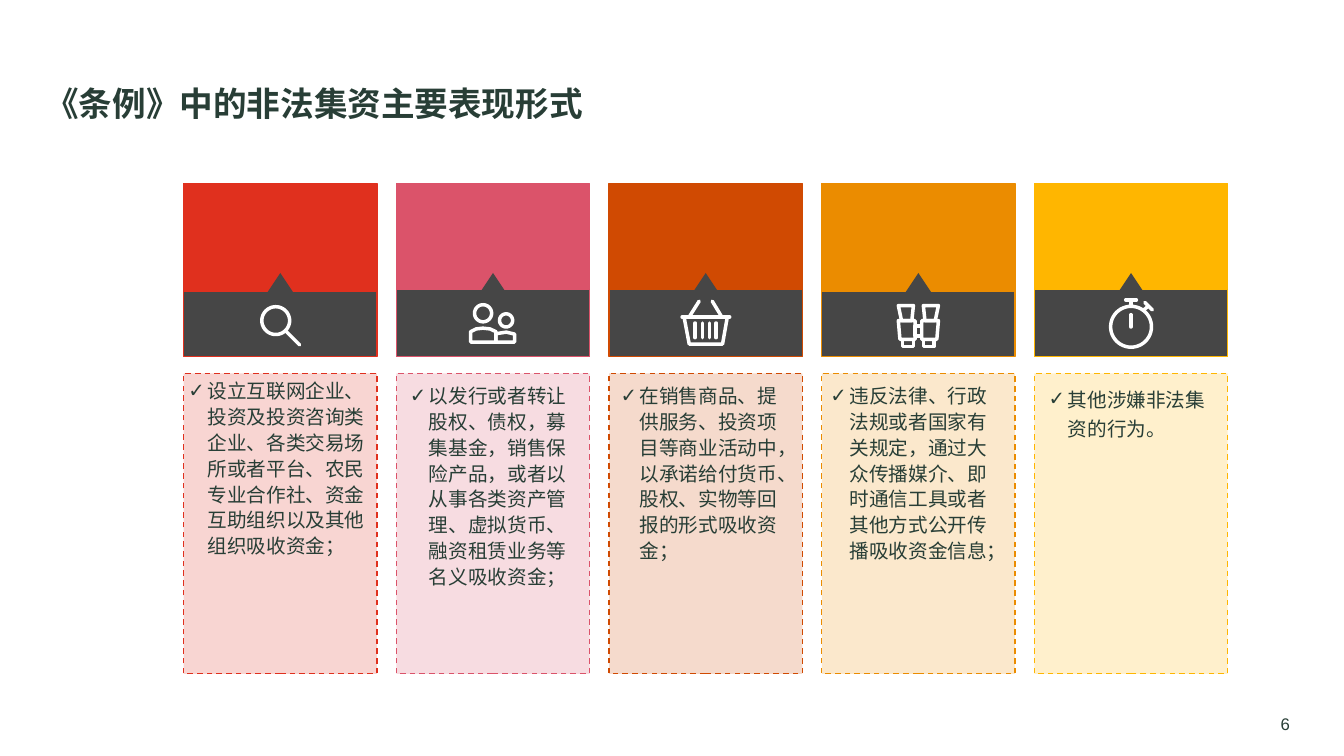
from dataclasses import dataclass
from math import cos, sin, tau

from lxml.etree import SubElement
from pptx import Presentation
from pptx.dml.color import RGBColor
from pptx.enum.dml import MSO_LINE
from pptx.enum.shapes import MSO_SHAPE
from pptx.enum.text import MSO_ANCHOR, MSO_AUTO_SIZE, PP_ALIGN
from pptx.oxml.ns import qn
from pptx.util import Cm, Pt

# Colours
INK = RGBColor(0x28, 0x3E, 0x36)
GRAPHITE = RGBColor(0x46, 0x46, 0x46)
WHITE = RGBColor(0xFF, 0xFF, 0xFF)
RED = RGBColor(0xE0, 0x30, 0x1E)
ROSE = RGBColor(0xDB, 0x53, 0x6A)
RUST = RGBColor(0xD0, 0x4A, 0x02)
ORANGE = RGBColor(0xEB, 0x8C, 0x00)
YELLOW = RGBColor(0xFF, 0xB6, 0x00)

# Column grid, in centimetres
FIRST_LEFT, PITCH, WIDTH = 4.63, 5.36, 4.87
HEADER_TOP, HEADER_HEIGHT = 4.62, 2.72
BAND_TOP, BAND_HEIGHT = 7.29, 1.7
PANEL_TOP, PANEL_HEIGHT = 9.41, 7.57
TEXT_TOP = 9.49
POINTER_TOP, POINTER_WIDTH, POINTER_HEIGHT = 6.88, 0.64, 0.48
RING_POINTS = 48

Point = tuple[float, float]


@dataclass(frozen=True)
class Stroke:
    points: list[Point]
    closed: bool = False


@dataclass(frozen=True)
class Column:
    color: RGBColor
    text: str
    text_offset: float
    text_width: float
    text_height: float
    icon: list[Stroke]
    inset: bool = True
    spacing: float = 1.1
    header_in_front: bool = False


def ring(left: float, top: float, diameter: float) -> Stroke:
    radius = diameter / 2
    angles = [tau * step / RING_POINTS for step in range(RING_POINTS)]
    return Stroke([(left + radius * (1 + cos(angle)), top + radius * (1 + sin(angle)))
                   for angle in angles], True)


def box(left: float, top: float, right: float, bottom: float) -> Stroke:
    return Stroke([(left, top), (right, top), (right, bottom), (left, bottom)], True)


def mirrored(stroke: Stroke) -> Stroke:
    return Stroke([(WIDTH - x, y) for x, y in stroke.points], stroke.closed)


# Icons, measured from the top left corner of the dark band
MAGNIFIER = [ring(1.97, 0.44, 0.7), Stroke([(2.59, 1.07), (2.92, 1.4)])]
PEOPLE = [
    ring(1.97, 0.39, 0.43),
    ring(2.6, 0.62, 0.33),
    Stroke([(1.87, 1.33), (1.87, 1.07), (2.01, 1), (2.18, 0.98), (2.36, 1),
            (2.51, 1.07), (2.51, 1.33)], True),
    Stroke([(2.51, 1.33), (2.51, 1.12), (2.77, 1.08), (2.98, 1.13), (2.98, 1.33)], True),
]
BASKET = [
    Stroke([(1.84, 0.7), (3.04, 0.7)]),
    Stroke([(1.89, 0.7), (2.02, 1.38), (2.86, 1.38), (2.98, 0.7)]),
    Stroke([(2.03, 0.68), (2.27, 0.3)]),
    Stroke([(2.83, 0.68), (2.6, 0.3)]),
    *[Stroke([(x, 0.85), (x, 1.22)]) for x in (2.17, 2.35, 2.53, 2.7)],
]
BARREL = [
    Stroke([(1.93, 0.41), (2.31, 0.41), (2.27, 0.79), (2.01, 0.79)], True),
    Stroke([(1.93, 0.79), (2.35, 0.79), (2.35, 1.26), (1.97, 1.26)], True),
    box(2.04, 1.26, 2.31, 1.44),
]
BINOCULARS = [*BARREL, *map(mirrored, BARREL), box(2.35, 0.93, 2.52, 1.18)]
STOPWATCH = [
    ring(1.92, 0.43, 1.03),
    Stroke([(2.43, 0.64), (2.43, 0.95)]),
    Stroke([(2.43, 0.27), (2.43, 0.41)]),
    Stroke([(2.3, 0.27), (2.57, 0.27)]),
    Stroke([(2.78, 0.33), (2.97, 0.52)]),
    Stroke([(2.86, 0.43), (2.77, 0.51)]),
]

COLUMNS = [
    Column(RED, "设立互联网企业、投资及投资咨询类企业、各类交易场所或者平台、农民专业合作社、"
           "资金互助组织以及其他组织吸收资金；", 0.12, 4.67, 4.57, MAGNIFIER,
           inset=False, header_in_front=True),
    Column(ROSE, "以发行或者转让股权、债权，募集基金，销售保险产品，或者以从事各类资产管理、"
           "虚拟货币、融资租赁业务等名义吸收资金；", 0.09, 4.67, 5.49, PEOPLE),
    Column(RUST, "在销售商品、提供服务、投资项目等商业活动中，以承诺给付货币、股权、"
           "实物等回报的形式吸收资金；", 0.04, 4.8, 4.83, BASKET),
    Column(ORANGE, "违反法律、行政法规或者国家有关规定，通过大众传播媒介、即时通信工具或者"
           "其他方式公开传播吸收资金信息；", -0.03, 4.83, 4.83, BINOCULARS,
           header_in_front=True),
    Column(YELLOW, "其他涉嫌非法集资的行为。", 0.11, 4.67, 1.68, STOPWATCH, spacing=1.25),
]


def add_run(paragraph, text: str, size: float, bold: bool = False) -> None:
    run = paragraph.add_run()
    run.text = text
    run.font.name = "Arial"
    run.font.size = Pt(size)
    run.font.bold = bold
    run.font.color.rgb = INK


def clear_insets(frame) -> None:
    frame.margin_left = frame.margin_right = frame.margin_top = frame.margin_bottom = 0


def add_block(slide, kind, left: float, top: float, width: float, height: float,
              fill: RGBColor, outline: RGBColor | None = None):
    shape = slide.shapes.add_shape(kind, Cm(left), Cm(top), Cm(width), Cm(height))
    shape.shadow.inherit = False
    shape.fill.solid()
    shape.fill.fore_color.rgb = fill
    if outline is None:
        shape.line.fill.background()
    else:
        shape.line.color.rgb = outline
        shape.line.width = Pt(1)
    return shape


def add_icon(slide, icon: list[Stroke], left: float, top: float) -> None:
    builder = None
    for stroke in icon:
        start, *others = [(Cm(left + x), Cm(top + y)) for x, y in stroke.points]
        if builder is None:
            builder = slide.shapes.build_freeform(*start)
        else:
            builder.move_to(*start)
        builder.add_line_segments(others, close=stroke.closed)
    shape = builder.convert_to_shape()
    shape.shadow.inherit = False
    shape.fill.background()
    shape.line.color.rgb = WHITE
    shape.line.width = Pt(2.5)
    shape.line._get_or_add_ln().set("cap", "rnd")


def add_bullet_text(slide, column: Column, left: float) -> None:
    text_box = slide.shapes.add_textbox(Cm(left + column.text_offset), Cm(TEXT_TOP),
                                        Cm(column.text_width), Cm(column.text_height))
    frame = text_box.text_frame
    frame.word_wrap = True
    frame.auto_size = MSO_AUTO_SIZE.SHAPE_TO_FIT_TEXT
    if not column.inset:
        clear_insets(frame)
    paragraph = frame.paragraphs[0]
    paragraph.line_spacing = column.spacing
    properties = paragraph._p.get_or_add_pPr()
    properties.set("marL", str(Cm(0.48)))
    properties.set("indent", str(Cm(-0.48)))
    SubElement(properties, qn("a:buFont"), typeface="Arial")
    SubElement(properties, qn("a:buChar"), char="✓")
    add_run(paragraph, column.text, 14)


def add_column(slide, column: Column, left: float) -> None:
    # Header and dark band
    header = (HEADER_TOP, HEADER_HEIGHT, column.color)
    band = (BAND_TOP, BAND_HEIGHT, GRAPHITE)
    for top, height, fill in (band, header) if column.header_in_front else (header, band):
        add_block(slide, MSO_SHAPE.RECTANGLE, left, top, WIDTH, height, fill, column.color)
    add_block(slide, MSO_SHAPE.ISOSCELES_TRIANGLE, left + (WIDTH - POINTER_WIDTH) / 2,
              POINTER_TOP, POINTER_WIDTH, POINTER_HEIGHT, GRAPHITE)
    add_icon(slide, column.icon, left, BAND_TOP)
    # Tinted panel with its text
    panel = add_block(slide, MSO_SHAPE.RECTANGLE, left, PANEL_TOP, WIDTH, PANEL_HEIGHT,
                      column.color, column.color)
    panel.line.dash_style = MSO_LINE.DASH
    tint = panel.fill._xPr.find(qn("a:solidFill"))[0]
    SubElement(tint, qn("a:alpha"), val="20000")
    add_bullet_text(slide, column, left)


def main() -> None:
    presentation = Presentation()
    presentation.slide_width, presentation.slide_height = Cm(33.87), Cm(19.05)
    slide = presentation.slides.add_slide(presentation.slide_layouts[5])

    # Title
    title = slide.shapes.title
    title.left, title.top, title.width, title.height = Cm(1.14), Cm(2.08), Cm(31.57), Cm(1.02)
    clear_insets(title.text_frame)
    title.text_frame.vertical_anchor = MSO_ANCHOR.BOTTOM
    title.text_frame.paragraphs[0].alignment = PP_ALIGN.LEFT
    add_run(title.text_frame.paragraphs[0], "《条例》中的非法集资主要表现形式", 24, bold=True)

    # Columns
    for index, column in enumerate(COLUMNS):
        add_column(slide, column, FIRST_LEFT + index * PITCH)

    # Page number
    number = slide.shapes.add_textbox(Cm(31.72), Cm(17.98), Cm(0.79), Cm(0.51)).text_frame
    clear_insets(number)
    number.word_wrap = False
    number.vertical_anchor = MSO_ANCHOR.BOTTOM
    number.paragraphs[0].alignment = PP_ALIGN.RIGHT
    add_run(number.paragraphs[0], "6", 12)

    presentation.save("out.pptx")


if __name__ == "__main__":
    main()
